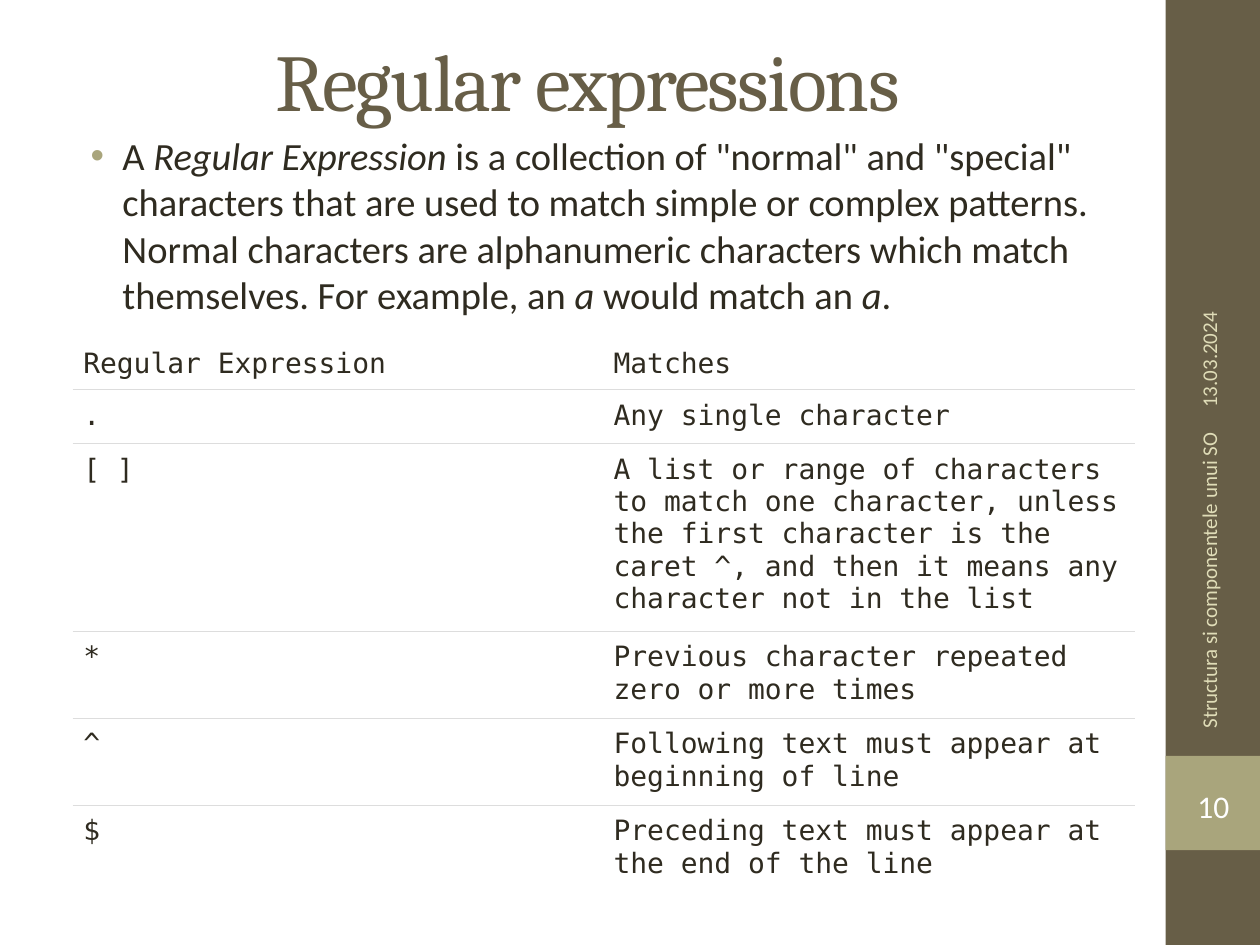
from lxml import etree
from pptx import Presentation
from pptx.dml.color import RGBColor
from pptx.enum.shapes import MSO_SHAPE
from pptx.enum.text import MSO_ANCHOR, PP_ALIGN
from pptx.oxml.ns import qn
from pptx.util import Cm, Pt

RECTANGLE, BRACKETS = MSO_SHAPE.RECTANGLE, MSO_SHAPE.DOUBLE_BRACKET
TOP, MIDDLE, BOTTOM = MSO_ANCHOR.TOP, MSO_ANCHOR.MIDDLE, MSO_ANCHOR.BOTTOM
LEFT, CENTER, RIGHT = PP_ALIGN.LEFT, PP_ALIGN.CENTER, PP_ALIGN.RIGHT

OLIVE, SAGE, INK, CREAM, WHITE, RULE = "675E47", "A9A57C", "2F2B20", "DFDCB7", "FFFFFF", "DDDDDD"

TITLE_FORMAT = {"name": "Cambria", "size": Pt(46)}
BODY_FORMAT = {"name": "Calibri", "size": Pt(22)}
NUMBER_FORMAT = {"name": "Calibri", "size": Pt(18)}
FOOTER_FORMAT = {"name": "Calibri", "size": Pt(12)}
CELL_FORMAT = {"name": "DejaVu Sans Mono", "size": Pt(16)}

# Each part of the definition with its italic setting.
DEFINITION = [
    ("A ", False),
    ("Regular Expression", True),
    (' is a collection of "normal" and "special" characters that are used to match '
     "simple or complex patterns. Normal characters are alphanumeric characters "
     "which match themselves. For example, an ", False),
    ("a", True),
    (" would match an ", False),
    ("a", True),
    (".", False),
]

# Minimum row height in cm, expression, meaning.
PATTERNS = [
    (0.81, "Regular Expression", "Matches"),
    (0.81, ".", "Any single character"),
    (2.87, "[ ]", "A list or range of characters to match one character, unless "
                  "the first character is the caret ^, and then it means any "
                  "character not in the list"),
    (1.32, "*", "Previous character repeated zero or more times"),
    (1.32, "^", "Following text must appear at beginning of line"),
    (1.32, "$", "Preceding text must appear at the end of the line"),
]


def rgb(value):
    return RGBColor.from_string(value)


def set_values(target, values):
    for name, value in values.items():
        setattr(target, name, value)


def equal_margins(size):
    return {f"margin_{side}": size for side in ("left", "right", "top", "bottom")}


def add_run(para, text, color, font_format, italic=False):
    span = para.add_run()
    span.text = text
    set_values(span.font, {**font_format, "italic": italic})
    span.font.color.rgb = rgb(color)
    return span


def add_shape(page, kind, place, fill=None):
    shape = page.shapes.add_shape(kind, *map(Cm, place))
    shape.shadow.inherit = False
    shape.line.fill.background()
    if fill:
        shape.fill.solid()
        shape.fill.fore_color.rgb = rgb(fill)
    else:
        shape.fill.background()
    return shape


def add_text_box(page, place, anchor, align, rotation=0):
    """Return the first paragraph of a new wrapping text box."""
    box = page.shapes.add_textbox(*map(Cm, place))
    box.rotation = rotation
    set_values(box.text_frame, {"word_wrap": True, "vertical_anchor": anchor})
    para = box.text_frame.paragraphs[0]
    para.alignment = align
    return para


def add_bullet(para, color):
    properties = para._p.get_or_add_pPr()
    properties.set("marL", str(Cm(0.95)))
    properties.set("indent", str(Cm(-0.64)))
    bullet_color = etree.SubElement(properties, qn("a:buClr"))
    etree.SubElement(bullet_color, qn("a:srgbClr"), val=color)
    etree.SubElement(properties, qn("a:buFont"), typeface="Arial")
    etree.SubElement(properties, qn("a:buChar"), char="•")


def add_border(cell, side, color):
    """Rule one edge of a cell; borders must come before its fill."""
    border = etree.Element(qn(f"a:{side}"), w=str(Pt(0.75)))
    fill = etree.SubElement(border, qn("a:solidFill"))
    etree.SubElement(fill, qn("a:srgbClr"), val=color)
    cell._tc.get_or_add_tcPr().insert(0, border)


def fill_cell(cell, text, anchor):
    set_values(cell, {**equal_margins(Cm(0.2)), "vertical_anchor": anchor})
    cell.fill.solid()
    cell.fill.fore_color.rgb = rgb(WHITE)
    add_run(cell.text_frame.paragraphs[0], text, INK, CELL_FORMAT)


def add_pattern_table(page):
    frame = page.shapes.add_table(len(PATTERNS), 2, Cm(1.48), Cm(6.78), Cm(21.38), Cm(11.68))
    table = frame.table
    set_values(table, {"first_row": False, "horz_banding": False})
    last = len(PATTERNS) - 1
    for index, (height, *texts) in enumerate(PATTERNS):
        table.rows[index].height = Cm(height)
        for column, text in enumerate(texts):
            cell = table.cell(index, column)
            fill_cell(cell, text, TOP if index else BOTTOM)
            if index < last:
                add_border(cell, "lnB", RULE)
            if index > 0:
                add_border(cell, "lnT", RULE)


def add_sidebar(page):
    add_shape(page, RECTANGLE, (23.5, 0, 1.9, 19.05), OLIVE)
    add_shape(page, RECTANGLE, (23.5, 15.24, 1.9, 1.9), SAGE)

    number = add_shape(page, BRACKETS, (23.7, 15.7, 1.52, 1.09))
    set_values(number.text_frame, {**equal_margins(0), "vertical_anchor": MIDDLE})
    para = number.text_frame.paragraphs[0]
    para.alignment = CENTER
    add_run(para, "10", WHITE, NUMBER_FORMAT)

    footer = add_text_box(page, (21.08, 11.25, 6.58, 1.02), MIDDLE, RIGHT, 270)
    add_run(footer, "Structura si componentele unui SO", CREAM, FOOTER_FORMAT)
    date = add_text_box(page, (20.98, 4.57, 6.78, 1.02), MIDDLE, LEFT, 270)
    add_run(date, "13.03.2024", CREAM, FOOTER_FORMAT)


def main():
    deck = Presentation()
    set_values(deck, {"slide_width": Cm(25.4), "slide_height": Cm(19.05)})
    page = deck.slides.add_slide(deck.slide_layouts[6])

    add_sidebar(page)
    title = add_text_box(page, (1.27, 0, 21.16, 3.18), MIDDLE, CENTER)
    span = add_run(title, "Regular expressions", OLIVE, TITLE_FORMAT)
    span.font._element.set("spc", "-100")

    definition = add_text_box(page, (1.27, 2.54, 21.16, 4.01), TOP, LEFT)
    add_bullet(definition, SAGE)
    for text, italic in DEFINITION:
        add_run(definition, text, INK, BODY_FORMAT, italic)

    add_pattern_table(page)
    deck.save("out.pptx")


if __name__ == "__main__":
    main()
